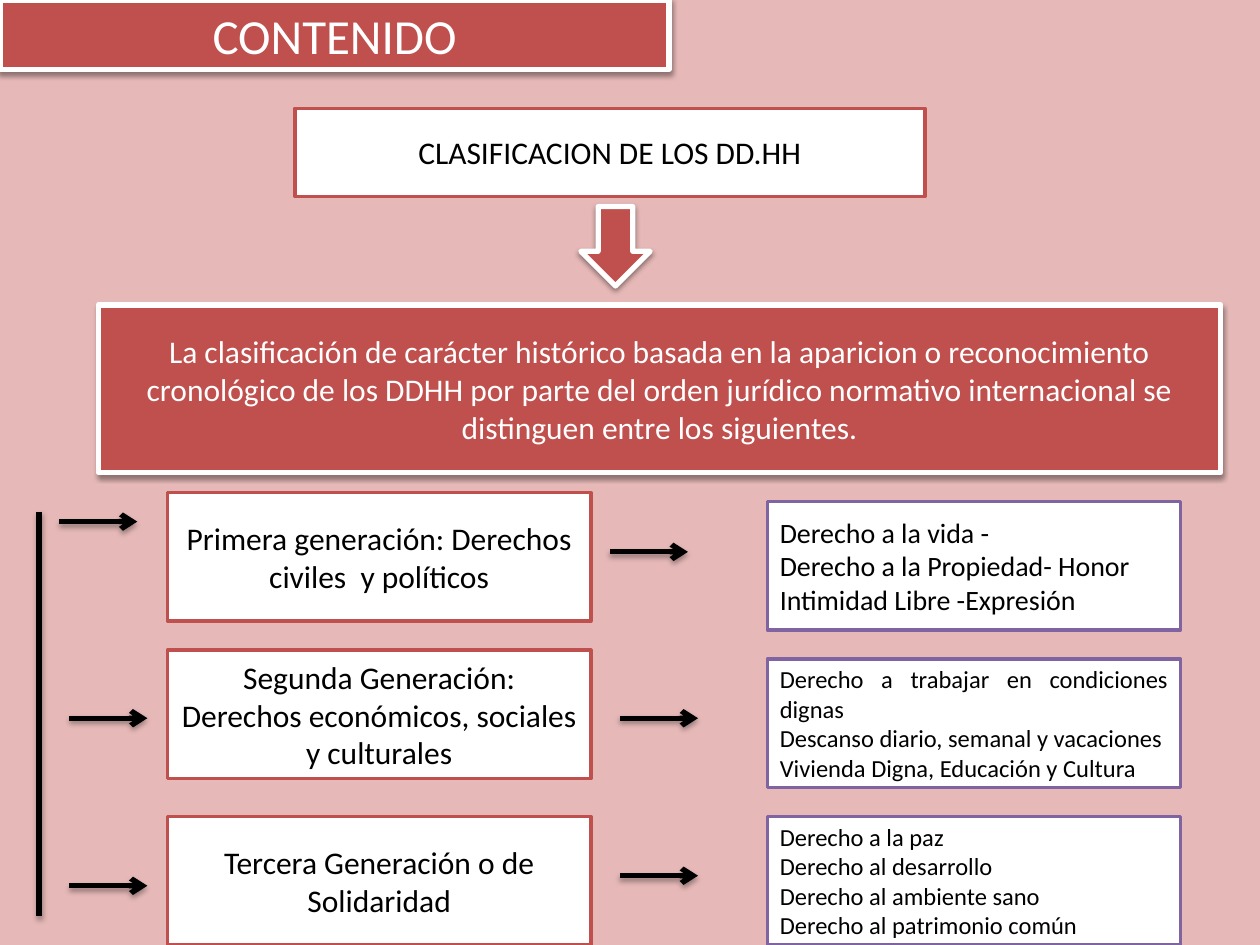
from lxml import etree
from pptx import Presentation
from pptx import util as u
from pptx.dml.color import RGBColor
from pptx.enum import shapes, text
from pptx.oxml import ns

RED, PURPLE, WHITE, BLACK, PINK = "C0504D", "8064A2", "FFFFFF", "000000", "E6B9B8"
CENTER, LEFT, JUSTIFY = text.PP_ALIGN.CENTER, text.PP_ALIGN.LEFT, text.PP_ALIGN.JUSTIFY
SOLID = {"fill": RED, "edge": WHITE, "width": 3, "shadow": (38, 1.6)}
OUTLINED = {"fill": WHITE, "edge": RED, "width": 2, "shadow": None}
RIGHTS = {**OUTLINED, "edge": PURPLE}

HEADING = "CONTENIDO"
TOPIC = "CLASIFICACION DE LOS DD.HH"
INTRO = ("La clasificación de carácter histórico basada en la aparicion o reconocimiento "
         "cronológico de los DDHH por parte del orden jurídico normativo internacional se "
         "distinguen entre los siguientes.")
GENERATIONS = [
    {"name": "Primera generación: Derechos civiles  y políticos",
     "rights": ["Derecho a la vida -",
                "Derecho a la Propiedad- Honor Intimidad Libre -Expresión"],
     "size": 16, "align": LEFT, "tops": (3.91, 3.98), "arrows": ((0.47, 4.14), (4.84, 4.38))},
    {"name": "Segunda Generación: Derechos económicos, sociales y culturales",
     "rights": ["Derecho a trabajar en condiciones dignas",
                "Descanso diario, semanal y vacaciones",
                "Vivienda Digna, Educación y Cultura"],
     "size": 14, "align": JUSTIFY, "tops": (5.16, 5.23), "arrows": ((0.55, 5.7), (4.92, 5.7))},
    {"name": "Tercera Generación o de Solidaridad",
     "rights": ["Derecho a la paz", "Derecho al desarrollo",
                "Derecho al ambiente sano", "Derecho al patrimonio común"],
     "size": 14, "align": LEFT, "tops": (6.48, 6.48), "arrows": ((0.55, 7.03), (4.92, 6.95))},
]
NAME_LEFT, NAME_WIDTH = 1.33, 3.36
RIGHTS_LEFT, RIGHTS_WIDTH = 6.09, 3.28
ROW_HEIGHT, ARROW_LENGTH = 1.02, 0.62


def paint(target, color):
    target.solid()
    target.fore_color.rgb = RGBColor.from_string(color)


def cast_shadow(part, shadow):
    effects = etree.SubElement(part.element.spPr, ns.qn("a:effectLst"))
    if shadow:
        opacity, distance = shadow
        outer = etree.SubElement(effects, ns.qn("a:outerShdw"), blurRad=str(u.Pt(3.1)),
                                 dist=str(u.Pt(distance)), dir="5400000", rotWithShape="0")
        black = etree.SubElement(outer, ns.qn("a:srgbClr"), val=BLACK)
        etree.SubElement(black, ns.qn("a:alpha"), val=str(opacity * 1000))


def dress(part, look):
    paint(part.fill, look["fill"])
    paint(part.line.fill, look["edge"])
    part.line.width = u.Pt(look["width"])
    cast_shadow(part, look["shadow"])


def write(part, lines, size, color, align=CENTER):
    frame = part.text_frame
    frame.text = "\n".join(lines)
    settings = {"word_wrap": True, "vertical_anchor": text.MSO_ANCHOR.MIDDLE,
                "auto_size": text.MSO_AUTO_SIZE.NONE}
    for key, value in settings.items():
        setattr(frame, key, value)
    for paragraph in frame.paragraphs:
        paragraph.alignment = align
        for key, value in {"name": "Calibri", "size": u.Pt(size)}.items():
            setattr(paragraph.runs[0].font, key, value)
        paint(paragraph.runs[0].font.fill, color)


def add_block(slide, area, look, kind=shapes.MSO_SHAPE.RECTANGLE):
    block = slide.shapes.add_shape(kind, *map(u.Inches, area))
    dress(block, look)
    return block


def add_stroke(slide, start, end, arrow=True):
    stroke = slide.shapes.add_connector(shapes.MSO_CONNECTOR.STRAIGHT,
                                        *map(u.Inches, start + end))
    paint(stroke.line.fill, BLACK)
    stroke.line.width = u.Pt(3)
    if arrow:
        outline = stroke.element.spPr.find(ns.qn("a:ln"))
        etree.SubElement(outline, ns.qn("a:tailEnd"), type="arrow")
    cast_shadow(stroke, (35, 1.8))


def main():
    """Build the slide on the three generations of human rights."""
    deck = Presentation()
    deck.slide_width, deck.slide_height = u.Inches(10), u.Inches(7.5)
    slide = deck.slides.add_slide(deck.slide_layouts[5])
    paint(slide.background.fill, PINK)

    heading = slide.shapes.title
    for side, value in zip(("left", "top", "width", "height"), (0, 0, 5.31, 0.55)):
        setattr(heading, side, u.Inches(value))
    dress(heading, SOLID)
    write(heading, [HEADING], 28, WHITE)

    write(add_block(slide, (2.34, 0.86, 5, 0.7), OUTLINED), [TOPIC], 18, BLACK)
    add_block(slide, (4.61, 1.64, 0.55, 0.63), SOLID, shapes.MSO_SHAPE.DOWN_ARROW)
    write(add_block(slide, (0.78, 2.42, 8.91, 1.33), SOLID), [INTRO], 18, WHITE)

    add_stroke(slide, (0.31, 4.06), (0.31, 7.27), arrow=False)
    for generation in GENERATIONS:
        name_top, rights_top = generation["tops"]
        name = add_block(slide, (NAME_LEFT, name_top, NAME_WIDTH, ROW_HEIGHT), OUTLINED)
        write(name, [generation["name"]], 18, BLACK)
        rights = add_block(slide, (RIGHTS_LEFT, rights_top, RIGHTS_WIDTH, ROW_HEIGHT), RIGHTS)
        write(rights, generation["rights"], generation["size"], BLACK, generation["align"])
        for x, y in generation["arrows"]:
            add_stroke(slide, (x, y), (x + ARROW_LENGTH, y))

    deck.save("out.pptx")


if __name__ == "__main__":
    main()
